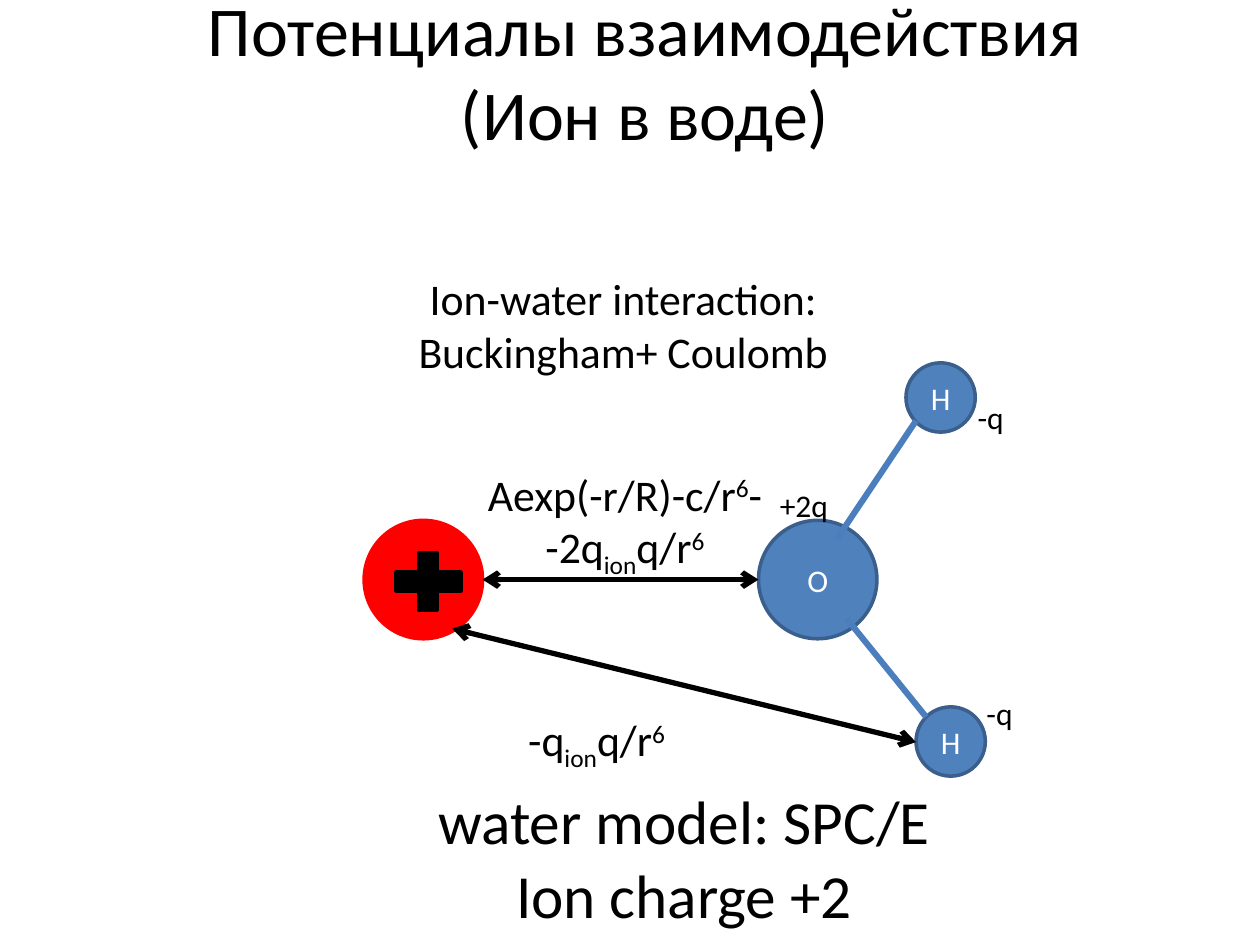
from lxml import etree
from pptx import Presentation
from pptx.dml.color import RGBColor
from pptx.enum.shapes import MSO_CONNECTOR, MSO_SHAPE
from pptx.enum.text import MSO_ANCHOR, PP_ALIGN
from pptx.oxml.ns import qn
from pptx.util import Pt

PX = 9144  # 100 px to the inch
FONT = "Calibri"
CENTER, LEFT = PP_ALIGN.CENTER, PP_ALIGN.LEFT
MIDDLE = MSO_ANCHOR.MIDDLE
OVAL, PLUS = MSO_SHAPE.OVAL, MSO_SHAPE.MATH_PLUS
STRAIGHT = MSO_CONNECTOR.STRAIGHT

BLACK = RGBColor(0x00, 0x00, 0x00)
WHITE = RGBColor(0xFF, 0xFF, 0xFF)
RED = RGBColor(0xFF, 0x00, 0x00)
BLUE = RGBColor(0x4F, 0x81, 0xBD)
DARK_BLUE = RGBColor(0x3A, 0x5F, 0x8C)
BOND_BLUE = RGBColor(0x4B, 0x7E, 0xBC)

# Runs with a raised or lowered baseline, in thousandths of a percent
POWER_6 = ("6", 30000)
ION = ("ion", -25000)

# Paragraphs are lists of runs: plain strings or (text, baseline)
# box (left, top, width, height), size, alignment, wrap, paragraphs
TEXTS = [
    ((-39, -16, 1102, 212), 40, CENTER, True,
     [["Потенциалы взаимодействия"], ["(Ион в воде)"]]),
    ((320, 211, 349, 94), 25, CENTER, False,
     [["Ion-water interaction:"], ["Buckingham+ Coulomb"]]),
    ((375, 366, 242, 94), 25, CENTER, False,
     [["Aexp(-r/R)-c/r", POWER_6, "-"], ["-2q", ION, "q/r", POWER_6]]),
    ((406, 561, 135, 52), 25, CENTER, False,
     [["-q", ION, "q/r", POWER_6]]),
    ((336, 617, 414, 128), 35, CENTER, False,
     [["water model: SPC/E"], ["Ion charge +2"]]),
    ((609, 381, 59, 40), 18, LEFT, False, [["+2q"]]),
    ((766, 311, 41, 40), 18, LEFT, False, [["-q"]]),
    ((773, 546, 41, 40), 18, LEFT, False, [["-q"]]),
]

# preset, box, fill, outline, label
PARTICLES = [
    (OVAL, (602, 413, 94, 94), BLUE, DARK_BLUE, "O"),
    (OVAL, (727, 561, 55, 55), BLUE, DARK_BLUE, "H"),
    (OVAL, (719, 288, 55, 55), BLUE, DARK_BLUE, "H"),
    (OVAL, (289, 413, 94, 94), RED, RED, ""),
    (PLUS, (305, 430, 70, 63), BLACK, BLACK, ""),
]

# from x, from y, to x, to y
BONDS = [(664, 428, 727, 334), (672, 491, 735, 569)]
INTERACTIONS = [(383, 460, 602, 460), (359, 499, 727, 589)]


def emu(lengths):
    return [length * PX for length in lengths]


def add_particle(shapes, preset, box, fill, outline, label):
    particle = shapes.add_shape(preset, *emu(box))
    particle.shadow.inherit = False
    particle.fill.solid()
    particle.fill.fore_color.rgb = fill
    particle.line.color.rgb = outline
    particle.line.width = Pt(2)
    if label:
        particle.text_frame.vertical_anchor = MIDDLE
        fill_paragraph(particle.text_frame.paragraphs[0], [label], 18, CENTER, WHITE)


def add_line(shapes, ends, color, width, arrows=False):
    line = shapes.add_connector(STRAIGHT, *emu(ends))
    line.line.color.rgb = color
    line.line.width = Pt(width)
    if arrows:
        outline = line.line._get_or_add_ln()
        for end in ("a:headEnd", "a:tailEnd"):
            etree.SubElement(outline, qn(end)).set("type", "arrow")
    etree.SubElement(line._element.spPr, qn("a:effectLst"))


def fill_paragraph(paragraph, runs, size, alignment, color):
    paragraph.alignment = alignment
    paragraph.font.name = FONT
    paragraph.font.size = Pt(size)
    paragraph.font.color.rgb = color
    for item in runs:
        text, baseline = (item, 0) if isinstance(item, str) else item
        run = paragraph.add_run()
        run.text = text
        if baseline:
            run._r.get_or_add_rPr().set("baseline", str(baseline))


def add_text(shapes, box, size, alignment, wrap, paragraphs):
    frame = shapes.add_textbox(*emu(box)).text_frame
    frame.word_wrap = wrap
    for index, runs in enumerate(paragraphs):
        paragraph = frame.add_paragraph() if index else frame.paragraphs[0]
        fill_paragraph(paragraph, runs, size, alignment, BLACK)


def main():
    prs = Presentation()
    prs.slide_width, prs.slide_height = emu((1000, 750))
    shapes = prs.slides.add_slide(prs.slide_layouts[6]).shapes

    # Water molecule and ion
    for particle in PARTICLES:
        add_particle(shapes, *particle)
    for ends in BONDS:
        add_line(shapes, ends, BOND_BLUE, 3.5)

    # Ion-water interactions
    for ends in INTERACTIONS:
        add_line(shapes, ends, BLACK, 3, arrows=True)

    # Title, formulas and charges
    for text in TEXTS:
        add_text(shapes, *text)

    prs.save("out.pptx")


if __name__ == "__main__":
    main()
